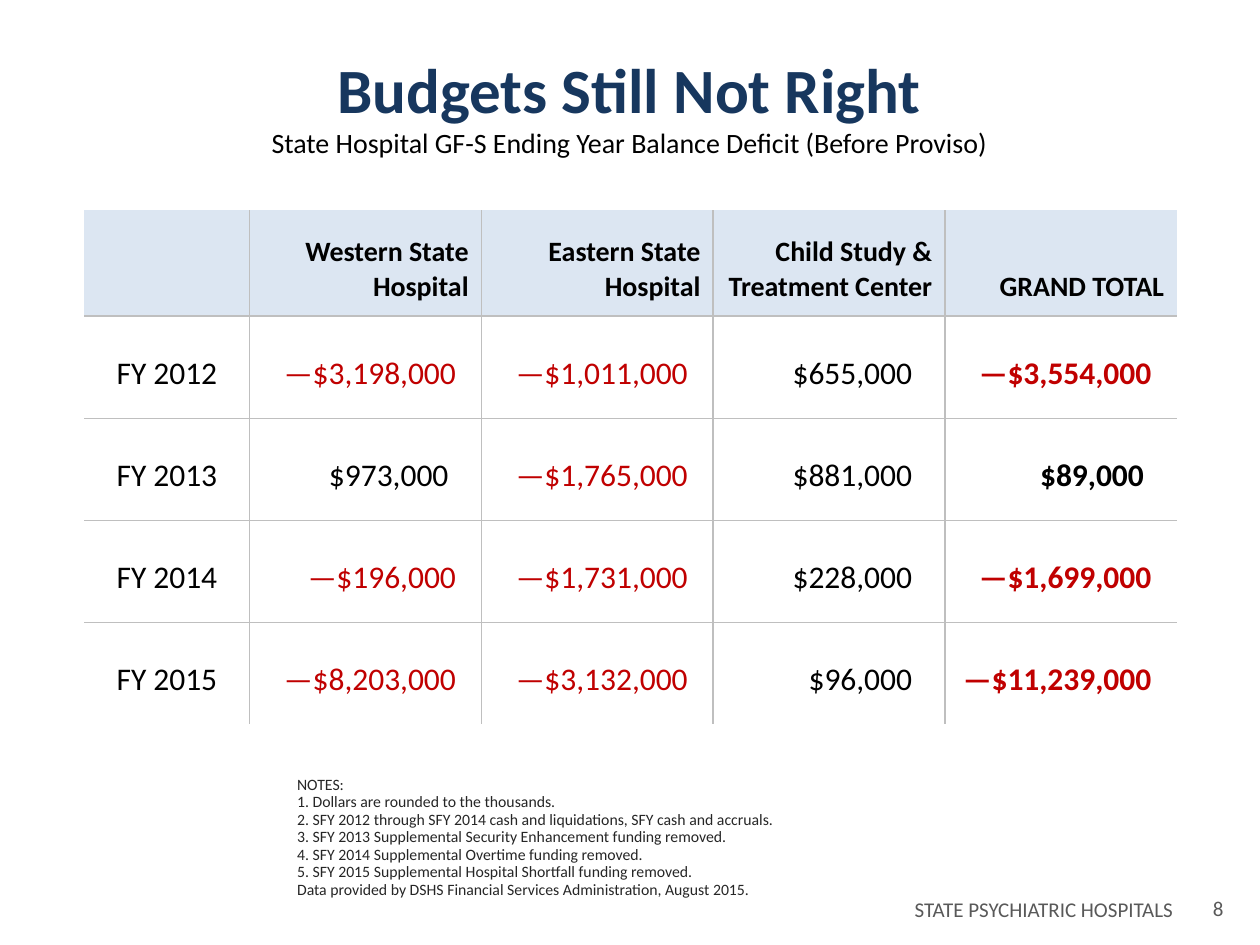
from lxml import etree
from pptx import Presentation, util as u
from pptx.dml.color import RGBColor
from pptx.enum import text
from pptx.oxml.ns import qn

NAVY = RGBColor(0x17, 0x37, 0x5E)
BLACK = RGBColor(0, 0, 0)
RED = RGBColor(0xC0, 0, 0)
CHARCOAL = RGBColor(0x26, 0x26, 0x26)
GREY = RGBColor(0x59, 0x59, 0x59)
RULE = RGBColor(0xBF, 0xBF, 0xBF)
PALE_BLUE = RGBColor(0xDC, 0xE6, 0xF2)
LEFT, CENTER, RIGHT = text.PP_ALIGN.LEFT, text.PP_ALIGN.CENTER, text.PP_ALIGN.RIGHT


def write(para, words, size, color=BLACK, bold=False, align=LEFT, line=None, after=None):
    """Fill a paragraph with one formatted run."""
    para.alignment = align
    para.line_spacing = line and u.Pt(line)
    para.space_after = None if after is None else u.Pt(after)
    span = para.add_run()
    span.text = words
    span.font.name = "Calibri"
    span.font.size = u.Pt(size)
    span.font.bold = bold
    span.font.color.rgb = color


def add_box(left, top, width, height):
    """Add a wrapping text box and return its frame."""
    frame = page.shapes.add_textbox(*map(u.Inches, (left, top, width, height))).text_frame
    frame.word_wrap = True
    return frame


deck = Presentation()
deck.slide_width, deck.slide_height = u.Inches(10), u.Inches(7.5)
page = deck.slides.add_slide(deck.slide_layouts[6])

# Title and subtitle
heading = add_box(0.75, 0.35, 8.49, 0.98)
write(heading.paragraphs[0], "Budgets Still Not Right", 36, NAVY, bold=True, align=CENTER)
write(heading.add_paragraph(),
      "State Hospital GF-S Ending Year Balance Deficit (Before Proviso)", 16, align=CENTER)

# Balance table
balances = [
    ["", "Western State Hospital", "Eastern State Hospital",
     "Child Study & Treatment Center", "GRAND TOTAL"],
    ["FY 2012", "—$3,198,000", "—$1,011,000", "$655,000", "—$3,554,000"],
    ["FY 2013", "$973,000", "—$1,765,000", "$881,000", "$89,000"],
    ["FY 2014", "—$196,000", "—$1,731,000", "$228,000", "—$1,699,000"],
    ["FY 2015", "—$8,203,000", "—$3,132,000", "$96,000", "—$11,239,000"],
]
widths = [1.31] + [1.84] * 4
heights = [0.84] + [0.81] * 4
last_row, last_col = len(heights) - 1, len(widths) - 1

table = page.shapes.add_table(
    len(heights), len(widths), u.Inches(0.67), u.Inches(1.67),
    u.Inches(sum(widths)), u.Inches(sum(heights))).table
table.first_row = table.horz_banding = False
for column, width in zip(table.columns, widths):
    column.width = u.Inches(width)
for row, height in zip(table.rows, heights):
    row.height = u.Inches(height)

for r, values in enumerate(balances):
    for c, value in enumerate(values):
        cell = table.cell(r, c)
        header, label = r == 0, c == 0
        negative = value.startswith("—")
        cell.vertical_anchor = text.MSO_ANCHOR.BOTTOM
        cell.margin_left = u.Inches(0.01)
        cell.margin_top = cell.margin_bottom = u.Inches(0.1 if header else 0.2)
        if header:
            right = 0.1
        elif label:
            right = 0.01
        else:
            right = 0.2 if negative else 0.26  # positives clear the bracket column
        cell.margin_right = u.Inches(right)

        if header:
            cell.fill.solid()
            cell.fill.fore_color.rgb = PALE_BLUE
        else:
            cell.fill.background()
        if value:
            write(cell.text_frame.paragraphs[0], value, 16 if header else 18,
                  RED if negative else BLACK, bold=header or c == last_col,
                  align=CENTER if label else RIGHT, after=0 if header else 6)

        # Rules run between cells only; the outer edge stays open
        inner = {"a:lnL": c > 0, "a:lnR": c < last_col, "a:lnT": r > 0, "a:lnB": r < last_row}
        properties = cell._tc.get_or_add_tcPr()
        for place, (edge, drawn) in enumerate(inner.items()):
            border = etree.Element(qn(edge), w=str(u.Pt(1)))
            if drawn:
                fill = etree.SubElement(border, qn("a:solidFill"))
                etree.SubElement(fill, qn("a:srgbClr"), val=str(RULE))
            else:
                etree.SubElement(border, qn("a:noFill"))
            properties.insert(place, border)

# Notes
notes = [
    "NOTES:",
    "1. Dollars are rounded to the thousands.",
    "2. SFY 2012 through SFY 2014 cash and liquidations, SFY cash and accruals.",
    "3. SFY 2013 Supplemental Security Enhancement funding removed.",
    "4. SFY 2014 Supplemental Overtime funding removed.",
    "5. SFY 2015 Supplemental Hospital Shortfall funding removed.",
    "Data provided by DSHS Financial Services Administration, August 2015.",
]
notes_frame = add_box(2.26, 6.11, 4.67, 1.08)
for i, note in enumerate(notes):
    para = notes_frame.add_paragraph() if i else notes_frame.paragraphs[0]
    write(para, note, 9, CHARCOAL, line=10)

# Footer and page number
write(add_box(6.24, 7.07, 3.17, 0.3).paragraphs[0],
      "STATE PSYCHIATRIC HOSPITALS", 12, GREY, align=RIGHT)
write(add_box(8.91, 7.06, 0.9, 0.3).paragraphs[0], "8", 12, GREY, align=RIGHT)

deck.save("out.pptx")
